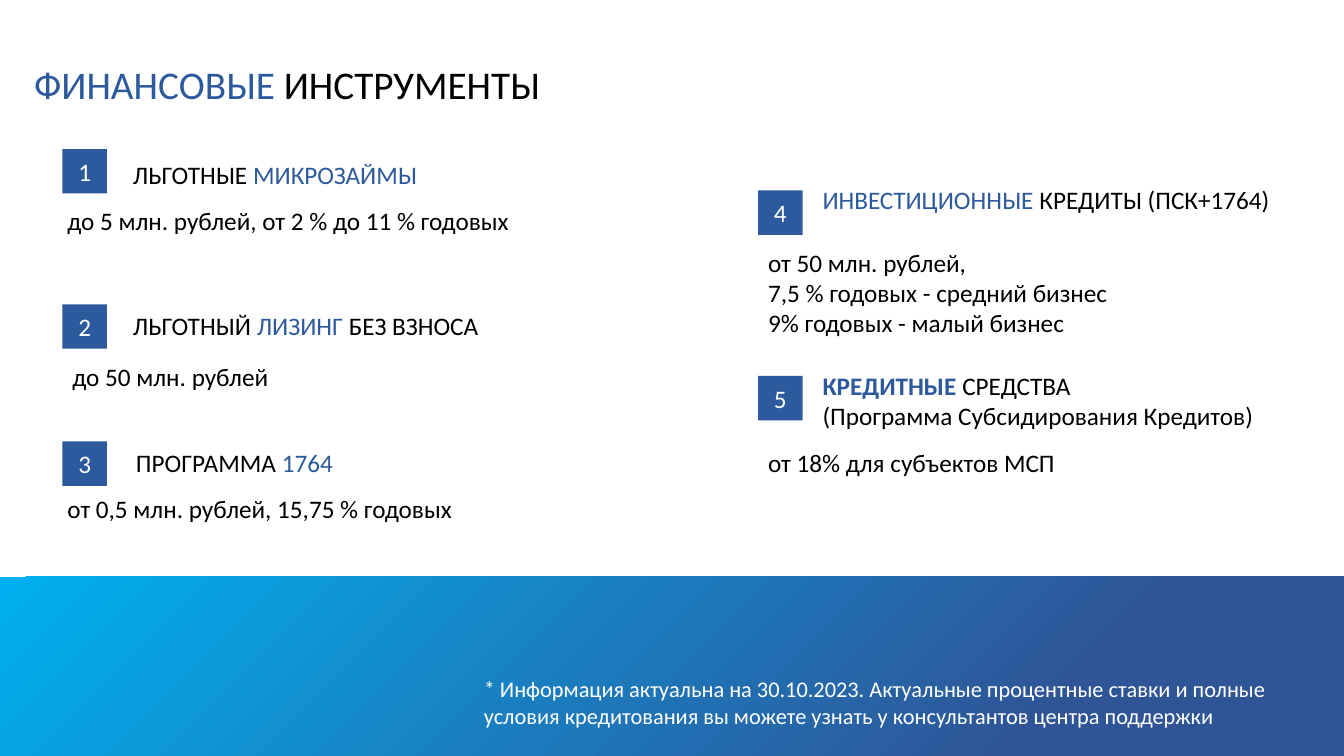
from dataclasses import dataclass

from pptx import Presentation
from pptx import util as u
from pptx.dml.color import RGBColor
from pptx.enum import shapes, text
from pptx.shapes.base import BaseShape
from pptx.slide import Slide


@dataclass(frozen=True)
class Theme:
    font: str = "Calibri"
    accent: str = "2C5A9C"
    ink: str = "000000"
    white: str = "FFFFFF"
    band_start: str = "00B0F0"
    band_end: str = "2F5597"
    title_size: int = 28
    body_size: int = 18
    note_size: int = 16


THEME = Theme()
BADGE_SIDE = 0.44


@dataclass(frozen=True)
class Run:
    text: str
    color: str = THEME.ink
    bold: bool = False


Line = tuple[Run, ...]


@dataclass(frozen=True)
class Block:
    left: float
    top: float
    width: float
    height: float
    lines: tuple[Line, ...]


@dataclass(frozen=True)
class Instrument:
    badge_left: float
    badge_top: float
    heading: Block
    terms: Block


def accent(words: str, bold: bool = False) -> Run:
    return Run(words, THEME.accent, bold)


LEFT, RIGHT = 0.62, 7.52

INSTRUMENTS = (
    Instrument(
        LEFT, 1.48,
        Block(1.22, 1.53, 3.69, 0.4, ((Run("ЛЬГОТНЫЕ "), accent("МИКРОЗАЙМЫ")),)),
        Block(0.57, 1.99, 5.84, 0.4, ((Run("до 5 млн. рублей, от 2 % до 11 % годовых"),),)),
    ),
    Instrument(
        LEFT, 3.02,
        Block(1.22, 3.03, 4.47, 0.4,
              ((Run("ЛЬГОТНЫЙ "), accent("ЛИЗИНГ "), Run("БЕЗ ВЗНОСА")),)),
        Block(0.62, 3.54, 3.27, 0.4, ((Run("до 50 млн. рублей"),),)),
    ),
    Instrument(
        LEFT, 4.38,
        Block(1.25, 4.39, 2.52, 0.4, ((Run("ПРОГРАММА "), accent("1764")),)),
        Block(0.57, 4.84, 4.69, 0.4, ((Run("от 0,5 млн. рублей, 15,75 % годовых"),),)),
    ),
    Instrument(
        RIGHT, 1.89,
        Block(8.06, 1.78, 4.78, 0.4,
              ((accent("ИНВЕСТИЦИОННЫЕ "), Run("КРЕДИТЫ (ПСК+1764)")),)),
        Block(RIGHT, 2.4, 5.42, 1.01, (
            (Run("от 50 млн. рублей,"),),
            (Run("7,5 % годовых - средний бизнес"),),
            (Run("9% годовых - малый бизнес"),),
        )),
    ),
    Instrument(
        RIGHT, 3.73,
        Block(8.06, 3.62, 4.89, 0.71, (
            (accent("КРЕДИТНЫЕ ", bold=True), Run("СРЕДСТВА")),
            (Run("(Программа Субсидирования Кредитов)"),),
        )),
        Block(RIGHT, 4.39, 4.43, 0.4, ((Run("от 18% для субъектов МСП"),),)),
    ),
)

TITLE = Block(0.24, 0.55, 10.36, 0.57, ((accent("ФИНАНСОВЫЕ"), Run(" ИНСТРУМЕНТЫ")),))
NOTE = Block(4.7, 6.65, 8.72, 0.64, ((Run(
    "* Информация актуальна на 30.10.2023. Актуальные процентные ставки и полные "
    "условия кредитования вы можете узнать у консультантов центра поддержки",
    THEME.white),),))


def write_text(
    shape: BaseShape,
    lines: tuple[Line, ...],
    *,
    size: int = THEME.body_size,
    align: text.PP_ALIGN = text.PP_ALIGN.LEFT,
    anchor: text.MSO_ANCHOR = text.MSO_ANCHOR.TOP,
) -> None:
    frame = shape.text_frame
    frame.word_wrap = True
    frame.vertical_anchor = anchor
    for index, line in enumerate(lines):
        paragraph = frame.add_paragraph() if index else frame.paragraphs[0]
        paragraph.alignment = align
        for part in line:
            run = paragraph.add_run()
            run.text = part.text
            run.font.name = THEME.font
            run.font.size = u.Pt(size)
            run.font.bold = part.bold
            run.font.color.rgb = RGBColor.from_string(part.color)


def add_block(slide: Slide, block: Block, size: int = THEME.body_size) -> None:
    box = slide.shapes.add_textbox(
        u.Inches(block.left), u.Inches(block.top),
        u.Inches(block.width), u.Inches(block.height))
    write_text(box, block.lines, size=size)
    box.text_frame.auto_size = text.MSO_AUTO_SIZE.SHAPE_TO_FIT_TEXT


def add_rectangle(
    slide: Slide, left: float, top: float, width: float, height: float
) -> BaseShape:
    """Add a rectangle without outline or shadow, ready to be filled."""
    shape = slide.shapes.add_shape(
        shapes.MSO_SHAPE.RECTANGLE,
        u.Inches(left), u.Inches(top), u.Inches(width), u.Inches(height))
    shape.shadow.inherit = False
    shape.line.fill.background()
    return shape


def add_band(slide: Slide) -> None:
    band = add_rectangle(slide, 0, 5.72, 13.33, 1.78)
    band.fill.gradient()
    band.fill.gradient_angle = 315
    stops = ((0, THEME.band_start), (0.78, THEME.band_end))
    for stop, (position, color) in zip(band.fill.gradient_stops, stops):
        stop.position = position
        stop.color.rgb = RGBColor.from_string(color)


def add_badge(slide: Slide, number: int, left: float, top: float) -> None:
    badge = add_rectangle(slide, left, top, BADGE_SIDE, BADGE_SIDE)
    badge.fill.solid()
    badge.fill.fore_color.rgb = RGBColor.from_string(THEME.accent)
    write_text(badge, ((Run(str(number), THEME.white),),),
               align=text.PP_ALIGN.CENTER, anchor=text.MSO_ANCHOR.MIDDLE)


def main() -> None:
    presentation = Presentation()
    presentation.slide_width = u.Inches(13.33)
    presentation.slide_height = u.Inches(7.5)
    slide = presentation.slides.add_slide(presentation.slide_layouts[6])

    add_band(slide)
    add_block(slide, TITLE, THEME.title_size)
    for number, instrument in enumerate(INSTRUMENTS, start=1):
        add_badge(slide, number, instrument.badge_left, instrument.badge_top)
        add_block(slide, instrument.heading)
        add_block(slide, instrument.terms)
    add_block(slide, NOTE, THEME.note_size)

    presentation.save("out.pptx")


if __name__ == "__main__":
    main()
